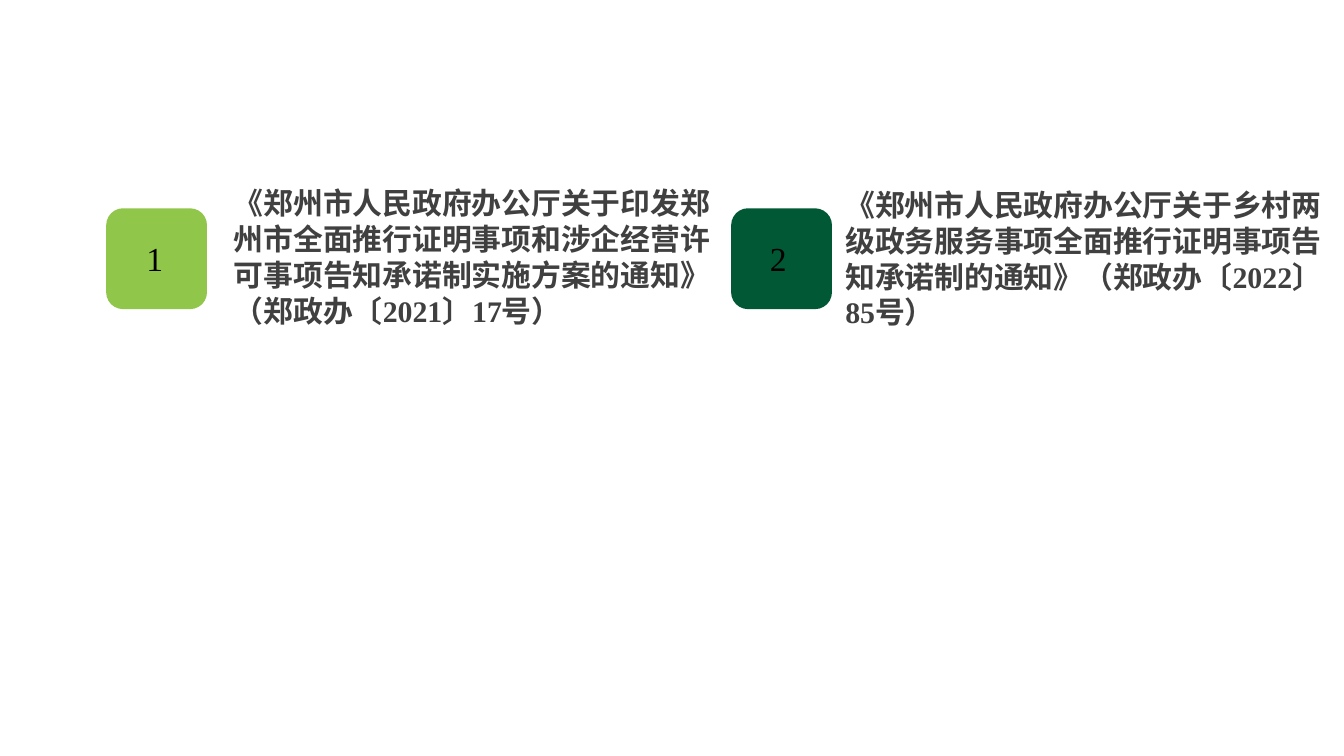
from dataclasses import dataclass

from pptx import Presentation
from pptx.dml.color import RGBColor
from pptx.enum.lang import MSO_LANGUAGE_ID
from pptx.enum.shapes import MSO_SHAPE
from pptx.enum.text import MSO_ANCHOR, MSO_AUTO_SIZE
from pptx.util import Pt


@dataclass(frozen=True)
class Theme:
    """Colours, font and type sizes of the slide."""

    light_green: RGBColor = RGBColor(0x90, 0xC7, 0x4B)
    dark_green: RGBColor = RGBColor(0x01, 0x58, 0x35)
    body: RGBColor = RGBColor(0x40, 0x40, 0x40)
    number: RGBColor = RGBColor(0, 0, 0)
    font: str = "Times New Roman"
    body_size: int = 16
    number_size: int = 18


THEME = Theme()
TILE_TOP = 111.6
TILE_SIZE = 54

NOTICES = [
    (
        "1", 56.9, 71.3, 125.3, 113, THEME.light_green,
        "《郑州市人民政府办公厅关于印发郑州市全面推行证明事项和涉企经营许可事项告知承诺制实施方案的通知》（郑政办〔2021〕17号）",
    ),
    (
        "2", 391.7, 405.4, 452.9, 113.8, THEME.dark_green,
        "《郑州市人民政府办公厅关于乡村两级政务服务事项全面推行证明事项告知承诺制的通知》（郑政办〔2022〕85号）",
    ),
]


def add_tile(page, left, color):
    """Add a rounded square without outline."""
    tile = page.shapes.add_shape(
        MSO_SHAPE.ROUNDED_RECTANGLE, Pt(left), Pt(TILE_TOP), Pt(TILE_SIZE), Pt(TILE_SIZE)
    )
    tile.shadow.inherit = False
    tile.fill.solid()
    tile.fill.fore_color.rgb = color
    tile.line.fill.background()


def add_text(page, text, left, top, width, height, size, color, bold=False):
    """Add a wrapping text box with one run and return its frame."""
    box = page.shapes.add_textbox(Pt(left), Pt(top), Pt(width), Pt(height))
    frame = box.text_frame
    frame.word_wrap = True
    span = frame.paragraphs[0].add_run()
    span.text = text
    span.font.name = THEME.font
    span.font.size = Pt(size)
    span.font.bold = bold
    span.font.color.rgb = color
    span.font.language_id = MSO_LANGUAGE_ID.SIMPLIFIED_CHINESE
    return frame


def add_number(page, text, left):
    """Add the number that sits on a tile."""
    frame = add_text(page, text, left, 123.8, 27.4, 29, THEME.number_size, THEME.number)
    frame.auto_size = MSO_AUTO_SIZE.SHAPE_TO_FIT_TEXT


def add_notice(page, text, left, top):
    """Add a bold notice title centred on its box height."""
    frame = add_text(page, text, left, top, 260, 49, THEME.body_size, THEME.body, bold=True)
    frame.vertical_anchor = MSO_ANCHOR.MIDDLE
    frame.margin_left = frame.margin_right = 0
    frame.margin_top = frame.margin_bottom = Pt(5.76)


def main():
    """Build the slide and save it."""
    deck = Presentation()
    deck.slide_width, deck.slide_height = Pt(720), Pt(405)
    page = deck.slides.add_slide(deck.slide_layouts[6])
    for number, tile_left, number_left, text_left, text_top, color, title in NOTICES:
        add_tile(page, tile_left, color)
        add_number(page, number, number_left)
        add_notice(page, title, text_left, text_top)
    deck.save("out.pptx")


if __name__ == "__main__":
    main()
